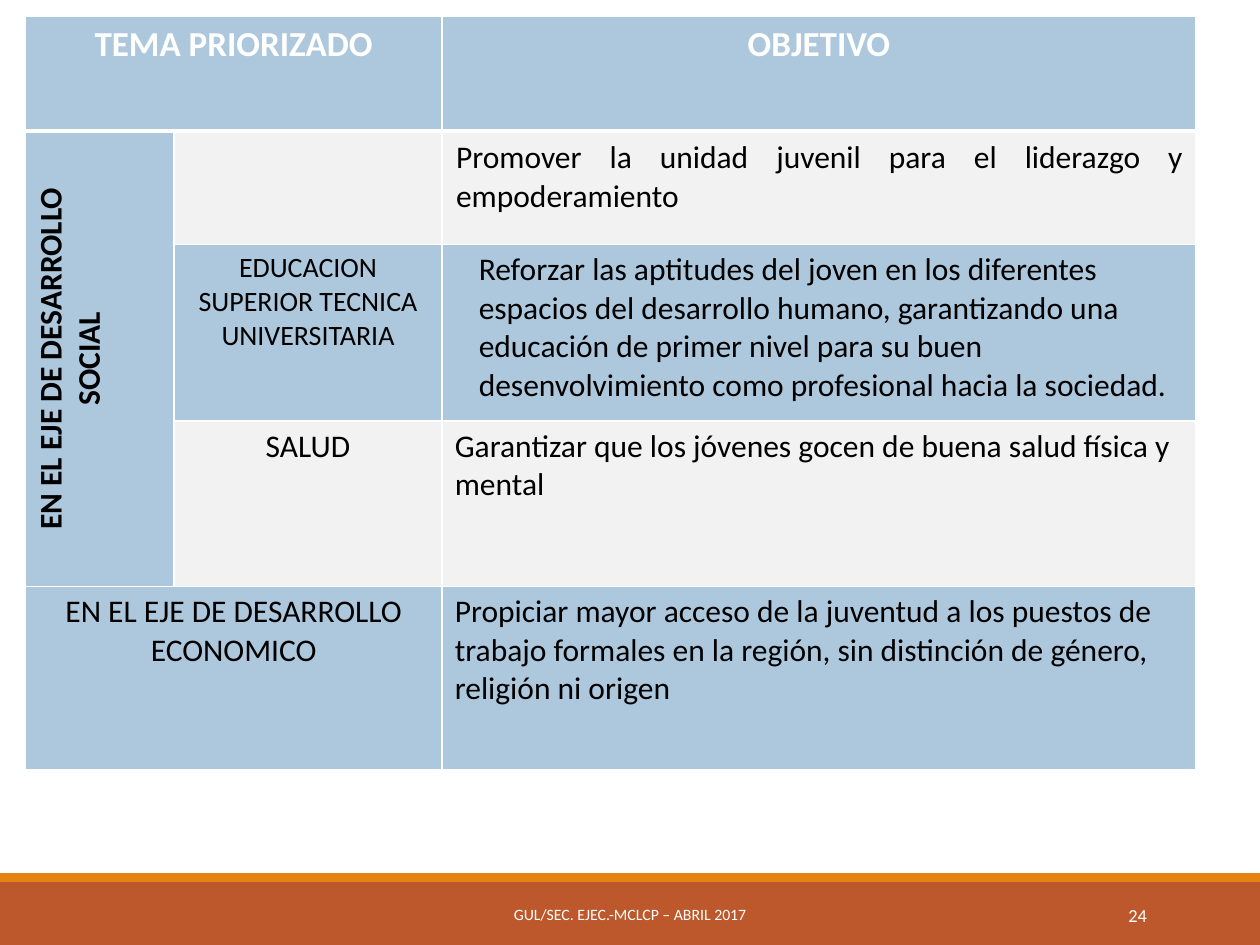
import pptx
import pptx.util
import pptx.dml.color
import pptx.enum.shapes
import pptx.enum.text
import pptx.oxml.ns
from lxml import etree

Inches = pptx.util.Inches
Align = pptx.enum.text.PP_ALIGN
Anchor = pptx.enum.text.MSO_ANCHOR

BLUE, GRAY, WHITE, BLACK = "ADC8DD", "F2F2F2", "FFFFFF", "000000"


def color(code):
    return pptx.dml.color.RGBColor.from_string(code)


class SlideBuilder:
    font = "Calibri"

    def __init__(self, slide):
        self.slide = slide

    def bar(self, top, height, fill):
        band = self.slide.shapes.add_shape(
            pptx.enum.shapes.MSO_SHAPE.RECTANGLE,
            Inches(0), Inches(top), Inches(10), Inches(height))
        band.shadow.inherit = False
        band.fill.solid()
        band.fill.fore_color.rgb = color(fill)
        band.line.fill.background()

    def add_words(self, frame, text, size, ink, align, bold=False):
        paragraph = frame.paragraphs[0]
        paragraph.alignment = align
        run = paragraph.add_run()
        run.text = text
        run.font.name = self.font
        run.font.size = pptx.util.Pt(size)
        run.font.bold = bold
        run.font.color.rgb = color(ink)
        return paragraph

    def label(self, left, width, text, size, align):
        box = self.slide.shapes.add_textbox(
            Inches(left), Inches(7.06), Inches(width), Inches(0.4))
        box.text_frame.word_wrap = True
        box.text_frame.vertical_anchor = Anchor.MIDDLE
        self.add_words(box.text_frame, text, size, WHITE, align)

    def grid(self, left, top, widths, heights):
        table = self.slide.shapes.add_table(
            len(heights), len(widths), Inches(left), Inches(top),
            Inches(sum(widths)), Inches(sum(heights))).table
        table.horz_banding = False
        for column, width in zip(table.columns, widths):
            column.width = Inches(width)
        for row, height in zip(table.rows, heights):
            row.height = Inches(height)
        return table

    def paint(self, cell, fill, top=1, bottom=1):
        properties = cell._tc.get_or_add_tcPr()
        qn = pptx.oxml.ns.qn
        for side, points in (("L", 1), ("R", 1), ("T", top), ("B", bottom)):
            line = etree.SubElement(properties, qn(f"a:ln{side}"), w=str(pptx.util.Pt(points)))
            solid = etree.SubElement(line, qn("a:solidFill"))
            etree.SubElement(solid, qn("a:srgbClr"), val=WHITE)
        cell.fill.solid()
        cell.fill.fore_color.rgb = color(fill)

    def entry(self, cell, text, size=18, ink=BLACK, align=Align.LEFT, bold=False,
              indent=0, spacing=None):
        paragraph = self.add_words(cell.text_frame, text, size, ink, align, bold)
        if indent:
            properties = paragraph._p.get_or_add_pPr()
            properties.set("marL", str(Inches(indent)))
            properties.set("indent", "0")
        if spacing:
            paragraph.line_spacing = spacing


def main():
    deck = pptx.Presentation()
    deck.slide_width, deck.slide_height = Inches(10), Inches(7.5)
    builder = SlideBuilder(deck.slides.add_slide(deck.slide_layouts[6]))

    builder.bar(7, 0.5, "BD582C")
    builder.bar(6.93, 0.07, "E48312")
    builder.label(8.12, 1.08, "24", 10.5, Align.RIGHT)

    priorities = builder.grid(0.2, 0.13, [1.18, 2.13, 5.98], [0.91, 0.9, 1.4, 1.3, 1.45])
    for row, fill in enumerate([BLUE, GRAY, BLUE, GRAY, BLUE]):
        for column in range(3):
            builder.paint(priorities.cell(row, column), fill if column else BLUE,
                          top=3 if row == 1 else 1, bottom=3 if row == 0 else 1)
    for start, end in (((0, 0), (0, 1)), ((1, 0), (3, 0)), ((4, 0), (4, 1))):
        priorities.cell(*start).merge(priorities.cell(*end))

    for column, heading in ((0, "TEMA PRIORIZADO"), (2, "OBJETIVO")):
        builder.entry(priorities.cell(0, column), heading, 20, WHITE, Align.CENTER, True)

    social_axis = priorities.cell(1, 0)
    social_axis.vertical_anchor = Anchor.MIDDLE
    social_axis._tc.get_or_add_tcPr().set("vert", "vert270")
    builder.entry(social_axis, "EN EL EJE DE DESARROLLO SOCIAL", align=Align.CENTER, bold=True)

    topics = [
        (2, 1, "EDUCACION SUPERIOR TECNICA UNIVERSITARIA", 16),
        (3, 1, "SALUD", 18),
        (4, 0, "EN EL EJE DE DESARROLLO ECONOMICO", 18),
    ]
    for row, column, topic, size in topics:
        builder.entry(priorities.cell(row, column), topic, size, align=Align.CENTER)

    goals = [
        ("Promover la unidad juvenil para el liderazgo y empoderamiento",
         dict(align=Align.JUSTIFY, indent=0.01, spacing=1.02)),
        ("Reforzar las aptitudes del joven en los diferentes espacios del desarrollo humano, "
         "garantizando una educación de primer nivel para su buen desenvolvimiento como "
         "profesional hacia la sociedad.", dict(indent=0.19)),
        ("Garantizar que los jóvenes gocen de buena salud física y mental", {}),
        ("Propiciar mayor acceso de la juventud a los puestos de trabajo formales en la región, "
         "sin distinción de género, religión ni origen", {}),
    ]
    for row, (goal, style) in enumerate(goals, start=1):
        builder.entry(priorities.cell(row, 2), goal, **style)

    builder.label(3.02, 3.96, "GUL/SEC. EJEC.-MCLCP – ABRIL 2017", 9, Align.CENTER)
    deck.save("out.pptx")


if __name__ == "__main__":
    main()
